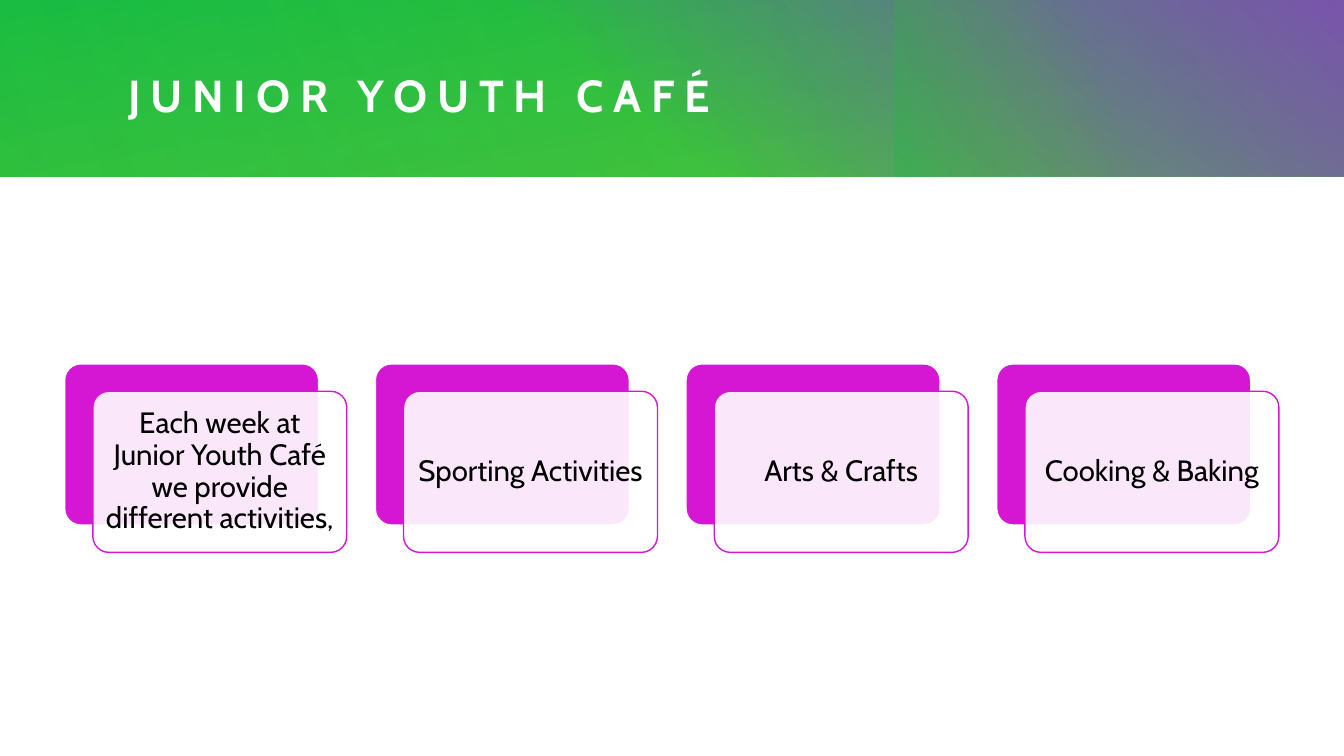
from lxml import etree
from pptx import Presentation
from pptx.dml.color import RGBColor
from pptx.enum.shapes import MSO_SHAPE
from pptx.enum.text import MSO_ANCHOR, MSO_AUTO_SIZE, PP_ALIGN
from pptx.oxml import parse_xml
from pptx.oxml.ns import nsdecls, qn
from pptx.util import Cm, Pt

RECTANGLE = MSO_SHAPE.RECTANGLE
ROUNDED = MSO_SHAPE.ROUNDED_RECTANGLE
MIDDLE = MSO_ANCHOR.MIDDLE
NO_AUTOFIT = MSO_AUTO_SIZE.NONE
LEFT, CENTER = PP_ALIGN.LEFT, PP_ALIGN.CENTER

FONT = "Cabin"
WHITE, BLACK, MAGENTA = "FFFFFF", "000000", "D517D4"
GREEN, LEAF, EMERALD, PURPLE = "31BC21", "67B514", "15BD4A", "9929E7"

BANNER_HEIGHT = 4.45
BANNER_LAYERS = [
    ((0, 0, 33.87, BANNER_HEIGHT), 0, 260, [(0, GREEN, 83), (100, EMERALD, 100)]),
    ((12.22, 0, 21.65, BANNER_HEIGHT), 0, 310, [(22, PURPLE, 0), (99, PURPLE, 100)]),
    ((25.07, -2.53, BANNER_HEIGHT, 9.5), 270, 250, [(45, LEAF, 0), (99, EMERALD, 33)]),
    ((6.82, 0, 27.03, BANNER_HEIGHT), 180, 330, [(0, GREEN, 30), (99, GREEN, 0)]),
    ((0, 0, 21.97, BANNER_HEIGHT), 0, 340, [(0, GREEN, 21), (99, GREEN, 0)]),
]

ACTIVITIES = [
    "Each week at Junior Youth Café we provide different activities,",
    "Sporting Activities",
    "Arts & Crafts",
    "Cooking & Baking",
]
CARD_LEFT, CARD_TOP, CARD_STEP = 1.63, 9.17, 7.83
CARD_WIDTH, CARD_HEIGHT = 6.4, 4.06
SHIFT_X, SHIFT_Y = 0.71, 0.69


def color(value):
    """Turn a hex string into a colour."""
    return RGBColor.from_string(value)


def add_box(shapes, kind, left, top, width, height):
    """Add a preset shape without shadow, measured in centimetres."""
    box = shapes.add_shape(kind, Cm(left), Cm(top), Cm(width), Cm(height))
    box.shadow.inherit = False
    return box


def set_gradient(box, angle, stops):
    """Fill a shape with a linear gradient of (position, colour, opacity) stops."""
    stop_xml = "".join(
        f'<a:gs pos="{position * 1000}"><a:srgbClr val="{value}">'
        f'<a:alpha val="{opacity * 1000}"/></a:srgbClr></a:gs>'
        for position, value, opacity in stops
    )
    gradient = parse_xml(
        f'<a:gradFill {nsdecls("a")} rotWithShape="1"><a:gsLst>{stop_xml}</a:gsLst>'
        f'<a:lin ang="{angle * 60000}" scaled="0"/></a:gradFill>'
    )
    box.fill.background()
    properties = box.element.spPr
    properties.replace(properties.find(qn("a:noFill")), gradient)


def add_banner_layer(page, frame, rotation, angle, stops):
    """Add one gradient rectangle of the banner."""
    box = add_box(page.shapes, RECTANGLE, *frame)
    box.rotation = rotation
    box.line.fill.background()
    set_gradient(box, angle, stops)


def write_text(shape, text, size, value, align, bold=False, tracking=0, spacing=1.0, inset=0):
    """Write one formatted paragraph into a shape."""
    frame = shape.text_frame
    frame.word_wrap = True
    frame.auto_size = NO_AUTOFIT
    frame.vertical_anchor = MIDDLE
    frame.margin_left = frame.margin_right = Cm(inset)
    frame.margin_top = frame.margin_bottom = Cm(inset)
    para = frame.paragraphs[0]
    para.alignment = align
    para.line_spacing = spacing
    span = para.add_run()
    span.text = text
    span.font.name = FONT
    span.font.size = Pt(size)
    span.font.bold = bold
    span.font.color.rgb = color(value)
    if tracking:
        span.font._element.set("spc", str(tracking * 100))


def add_title(page, text):
    """Place the page title over the banner."""
    title = page.shapes.title
    title.left, title.top = Cm(3.23), Cm(1.04)
    title.width, title.height = Cm(28.83), Cm(2.69)
    write_text(title, text, 32, WHITE, LEFT, bold=True, tracking=7)


def add_panel(shapes, left, top, fill, line, opacity=100):
    """Add one rounded panel of an activity card."""
    panel = add_box(shapes, ROUNDED, left, top, CARD_WIDTH, CARD_HEIGHT)
    panel.adjustments[0] = 0.1
    panel.fill.solid()
    panel.fill.fore_color.rgb = color(fill)
    panel.line.color.rgb = color(line)
    panel.line.width = Pt(1)
    if opacity < 100:
        tint = panel.element.spPr.find(qn("a:solidFill"))[0]
        etree.SubElement(tint, qn("a:alpha")).set("val", str(opacity * 1000))
    return panel


def add_card(shapes, left, text):
    """Add a magenta panel with a translucent text panel shifted over it."""
    add_panel(shapes, left, CARD_TOP, MAGENTA, WHITE)
    front = add_panel(shapes, left + SHIFT_X, CARD_TOP + SHIFT_Y, WHITE, MAGENTA, opacity=90)
    write_text(front, text, 21, BLACK, CENTER, spacing=0.9, inset=0.1)


def main():
    """Build the deck and save it."""
    deck = Presentation()
    deck.slide_width, deck.slide_height = Cm(33.87), Cm(19.05)
    page = deck.slides.add_slide(deck.slide_layouts[5])
    for layer in BANNER_LAYERS:
        add_banner_layer(page, *layer)
    add_title(page, "JUNIOR YOUTH CAFÉ")
    title = page.shapes.title.element
    title.getparent().append(title)
    cards = page.shapes.add_group_shape()
    for index, activity in enumerate(ACTIVITIES):
        add_card(cards.shapes, CARD_LEFT + index * CARD_STEP, activity)
    deck.save("out.pptx")


if __name__ == "__main__":
    main()
